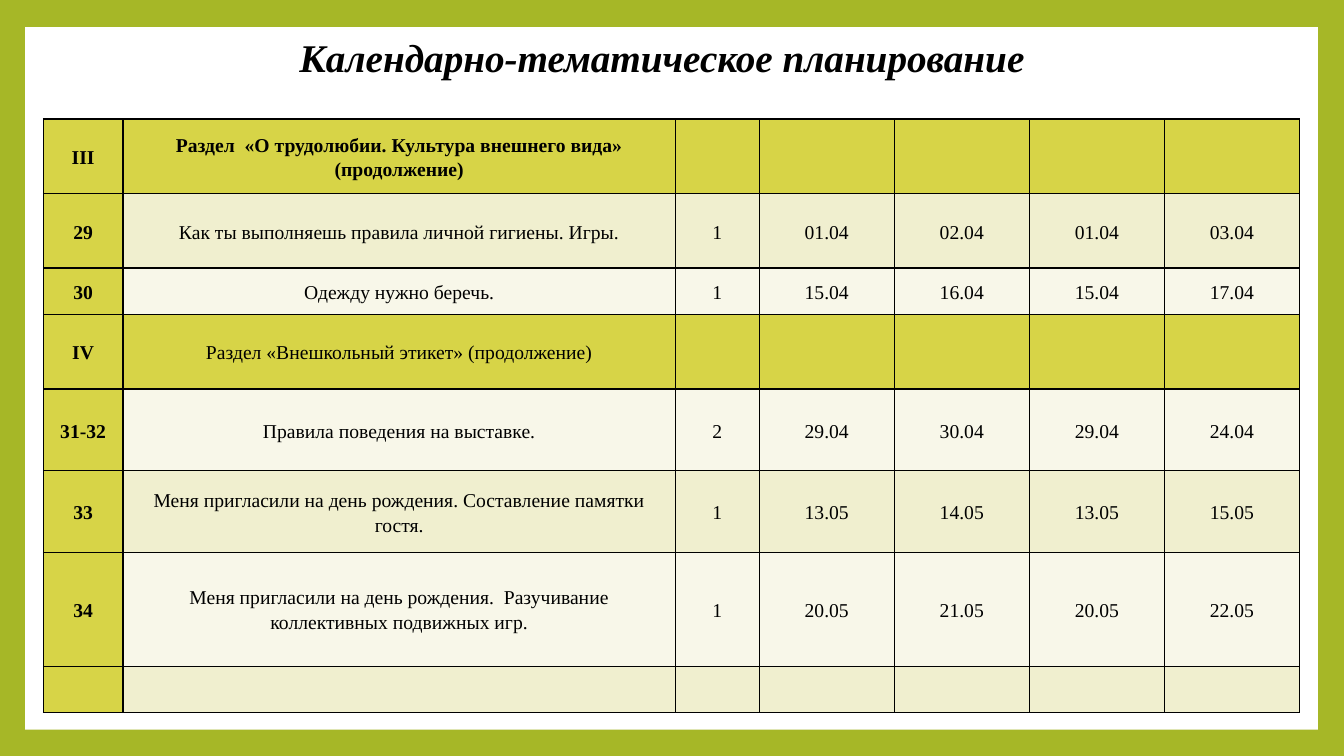
import pptx
import pptx.dml.color
import pptx.enum.shapes
import pptx.enum.text
import pptx.oxml
import pptx.oxml.ns
import pptx.util
from pptx.util import Inches

FONT = "Times New Roman"
COLORS = {
    "frame": "A6B727",
    "page": "FFFFFF",
    "text": "000000",
    "border": "000000",
    "section": "D7D447",
    "odd": "F0EFCF",
    "even": "F8F7E9",
}
COLUMN_WIDTHS = [0.79, 5.48, 0.83] + [1.34] * 4
ROW_HEIGHTS = [0.74, 0.74, 0.46, 0.74, 0.81, 0.81, 1.13, 0.46]
SECTION_ROWS = (0, 3)
LESSONS = [
    ["III", "Раздел  «О трудолюбии. Культура внешнего вида» (продолжение)"],
    ["29", "Как ты выполняешь правила личной гигиены. Игры.",
     "1", "01.04", "02.04", "01.04", "03.04"],
    ["30", "Одежду нужно беречь.", "1", "15.04", "16.04", "15.04", "17.04"],
    ["IV", "Раздел «Внешкольный этикет» (продолжение)"],
    ["31-32", "Правила поведения на выставке.",
     "2", "29.04", "30.04", "29.04", "24.04"],
    ["33", "Меня пригласили на день рождения. Составление памятки гостя.",
     "1", "13.05", "14.05", "13.05", "15.05"],
    ["34", "Меня пригласили на день рождения.  Разучивание коллективных подвижных игр.",
     "1", "20.05", "21.05", "20.05", "22.05"],
    [],
]


def color(name):
    return pptx.dml.color.RGBColor.from_string(COLORS[name])


def write_text(text_frame, text, size, line_spacing, bold=False, italic=False):
    text_frame.text = text
    paragraph = text_frame.paragraphs[0]
    paragraph.alignment = pptx.enum.text.PP_ALIGN.CENTER
    paragraph.line_spacing = line_spacing
    for run in paragraph.runs:
        run.font.name = FONT
        run.font.size = pptx.util.Pt(size)
        run.font.bold = bold
        run.font.italic = italic
        run.font.color.rgb = color("text")


def add_page(slide):
    """Set the green background and lay the white page on it."""
    slide.background.fill.solid()
    slide.background.fill.fore_color.rgb = color("frame")
    page = slide.shapes.add_shape(
        pptx.enum.shapes.MSO_SHAPE.RECTANGLE,
        Inches(0.25), Inches(0.27), Inches(12.82), Inches(6.97))
    page.shadow.inherit = False
    page.fill.solid()
    page.fill.fore_color.rgb = color("page")
    page.line.fill.background()


def add_title(slide, text):
    title = slide.shapes.add_textbox(
        Inches(1.94), Inches(0.24), Inches(9.25), Inches(0.71))
    title.text_frame.word_wrap = True
    title.text_frame.vertical_anchor = pptx.enum.text.MSO_ANCHOR.MIDDLE
    write_text(title.text_frame, text, 28, 0.9, bold=True, italic=True)


def add_borders(cell):
    properties = cell._tc.get_or_add_tcPr()
    for side in ("lnL", "lnR", "lnT", "lnB"):
        properties.append(pptx.oxml.parse_xml(
            f'<a:{side} {pptx.oxml.ns.nsdecls("a")} w="{pptx.util.Pt(1)}">'
            f'<a:solidFill><a:srgbClr val="{COLORS["border"]}"/></a:solidFill>'
            f'</a:{side}>'))


def cell_fill(row, column):
    if column == 0 or row in SECTION_ROWS:
        return "section"
    return "odd" if row % 2 else "even"


def add_schedule(slide):
    table = slide.shapes.add_table(
        len(ROW_HEIGHTS), len(COLUMN_WIDTHS), Inches(0.43), Inches(1.18),
        Inches(sum(COLUMN_WIDTHS)), Inches(sum(ROW_HEIGHTS))).table
    for column, width in zip(table.columns, COLUMN_WIDTHS):
        column.width = Inches(width)
    for row, (height, lesson) in enumerate(zip(ROW_HEIGHTS, LESSONS)):
        table.rows[row].height = Inches(height)
        for column in range(len(COLUMN_WIDTHS)):
            cell = table.cell(row, column)
            add_borders(cell)
            cell.fill.solid()
            cell.fill.fore_color.rgb = color(cell_fill(row, column))
            cell.margin_left = cell.margin_right = Inches(0.07)
            cell.margin_top = cell.margin_bottom = 0
            cell.vertical_anchor = pptx.enum.text.MSO_ANCHOR.MIDDLE
            if column < len(lesson):
                write_text(cell.text_frame, lesson[column], 14, 1.15,
                           bold=column == 0 or row == 0)


def main():
    presentation = pptx.Presentation()
    presentation.slide_width = Inches(13.33)
    presentation.slide_height = Inches(7.5)
    slide = presentation.slides.add_slide(presentation.slide_layouts[6])
    add_page(slide)
    add_title(slide, "Календарно-тематическое планирование")
    add_schedule(slide)
    presentation.save("out.pptx")


if __name__ == "__main__":
    main()
